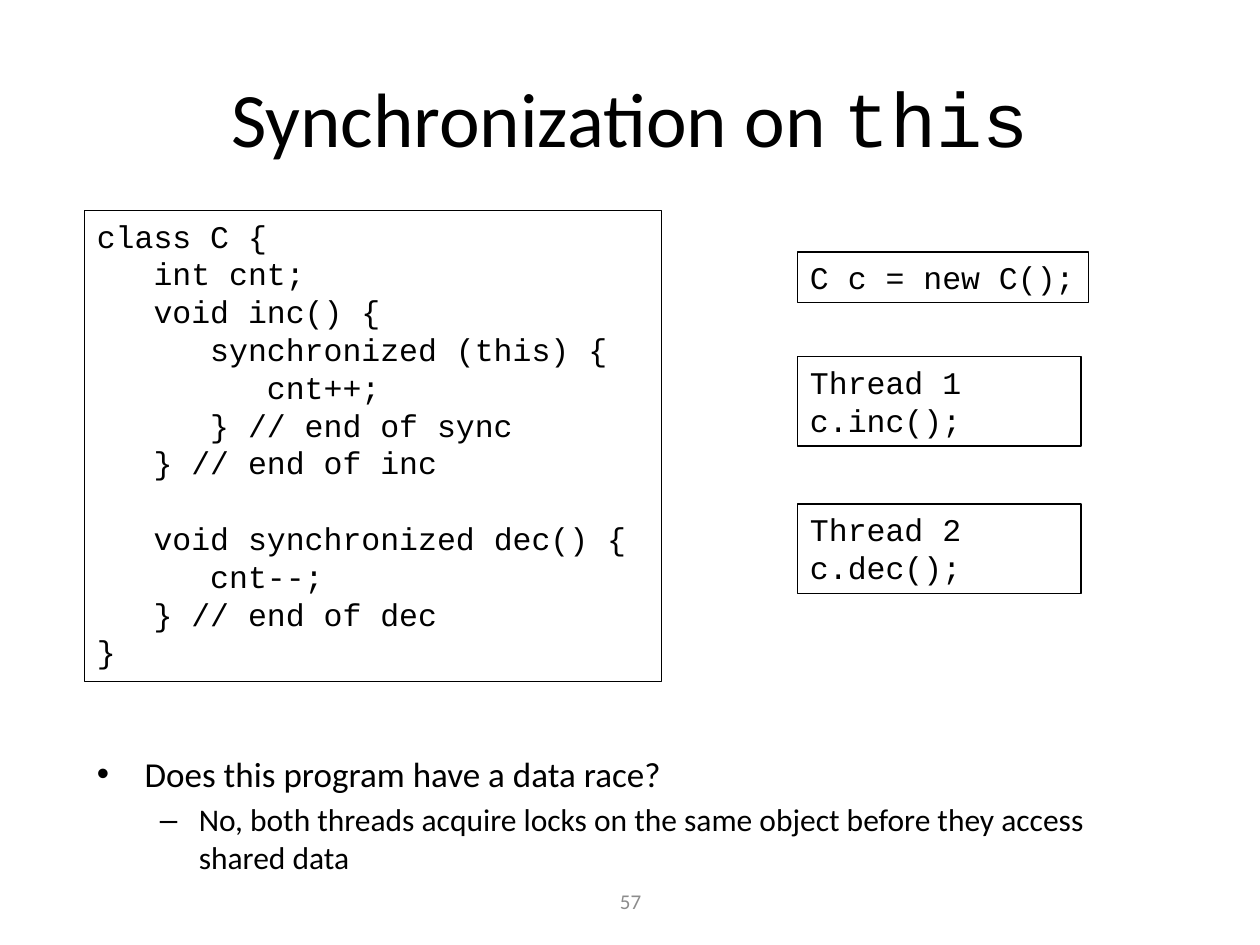
from pptx import Presentation
from pptx.dml.color import RGBColor
from pptx.enum.shapes import MSO_SHAPE
from pptx.enum.text import MSO_ANCHOR, PP_ALIGN
from pptx.oxml.ns import qn
from pptx.util import Inches, Pt
from lxml.etree import SubElement


def paint(code):
    return RGBColor.from_string(code)


class Deck:
    """Holds the style and the current slide."""
    sans, mono = "Calibri", "Courier New"
    ink, gray = "000000", "8C8C8C"
    step, gap = 0.45, 21.6

    def __init__(self):
        self.prs = Presentation()
        self.prs.slide_width, self.prs.slide_height = Inches(10), Inches(7.5)
        self.slide = self.prs.slides.add_slide(self.prs.slide_layouts[6])

    def run(self, para, text, size, font, color=ink):
        run = para.add_run()
        run.text = text
        run.font.size, run.font.name = Pt(size), font
        run.font.color.rgb = paint(color)

    def indent(self, para, left, first=0):
        props = para._p.get_or_add_pPr()
        props.set("marL", str(Inches(left)))
        props.set("indent", str(Inches(first)))
        return props

    def label(self, area, runs, size, color=ink):
        frame = self.slide.shapes.add_textbox(*map(Inches, area)).text_frame
        frame.word_wrap = True
        frame.vertical_anchor = MSO_ANCHOR.MIDDLE
        para = frame.paragraphs[0]
        para.alignment = PP_ALIGN.CENTER
        for text, font in runs:
            self.run(para, text, size, font, color)

    def code(self, area, lines, wrap=True):
        box = self.slide.shapes.add_shape(MSO_SHAPE.RECTANGLE, *map(Inches, area))
        box.shadow.inherit = False
        box.fill.background()
        box.line.color.rgb = paint(self.ink)
        box.line.width = Pt(0.75)
        frame = box.text_frame
        frame.word_wrap = wrap
        frame.vertical_anchor = MSO_ANCHOR.TOP
        for i, (depth, text, gap) in enumerate(lines):
            para = frame.add_paragraph() if i else frame.paragraphs[0]
            para.alignment = PP_ALIGN.LEFT
            para.space_before = Pt(gap)
            self.indent(para, depth * self.step)
            self.run(para, text, 18, self.mono)

    def points(self, area, items):
        frame = self.slide.shapes.add_textbox(*map(Inches, area)).text_frame
        frame.word_wrap = True
        for i, (level, mark, left, hang, size, text) in enumerate(items):
            para = frame.add_paragraph() if i else frame.paragraphs[0]
            para.level = level
            para.space_before = Pt(size * 0.2)
            props = self.indent(para, left, -hang)
            SubElement(props, qn("a:buFont")).set("typeface", "Arial")
            SubElement(props, qn("a:buChar")).set("char", mark)
            self.run(para, text, size, self.sans)


def main():
    deck = Deck()
    deck.label((0.5, 0.3, 9, 1.25),
               [("Synchronization on ", deck.sans), ("this", deck.mono)], 44)
    deck.points((0.67, 5.92, 8.5, 1.17), [
        (0, "•", 0.38, 0.38, 20, "Does this program have a data race?"),
        (1, "–", 0.81, 0.31, 18, "No, both threads acquire locks on the same "
         "object before they access shared data"),
    ])
    deck.label((3.42, 6.95, 3.17, 0.4), [("57", deck.sans)], 12, deck.gray)
    deck.code((0.67, 1.67, 4.58, 3.74), [
        (0, "class C {", 0),
        (1, "int cnt;", 0),
        (1, "void inc() {", 0),
        (2, "synchronized (this) {", 0),
        (3, "cnt++;", 0),
        (2, "} // end of sync", 0),
        (1, "} // end of inc", 0),
        (1, "void synchronized dec() {", deck.gap),
        (2, "cnt--;", 0),
        (1, "} // end of dec", 0),
        (0, "}", 0),
    ])
    deck.code((6.33, 2, 2.31, 0.4), [(0, "C c = new C();", 0)], False)
    for top, name, call in ((2.83, "Thread 1", "c.inc();"),
                            (4, "Thread 2", "c.dec();")):
        deck.code((6.33, top, 2.25, 0.71), [(0, name, 0), (0, call, 0)])
    deck.prs.save("out.pptx")


if __name__ == "__main__":
    main()
